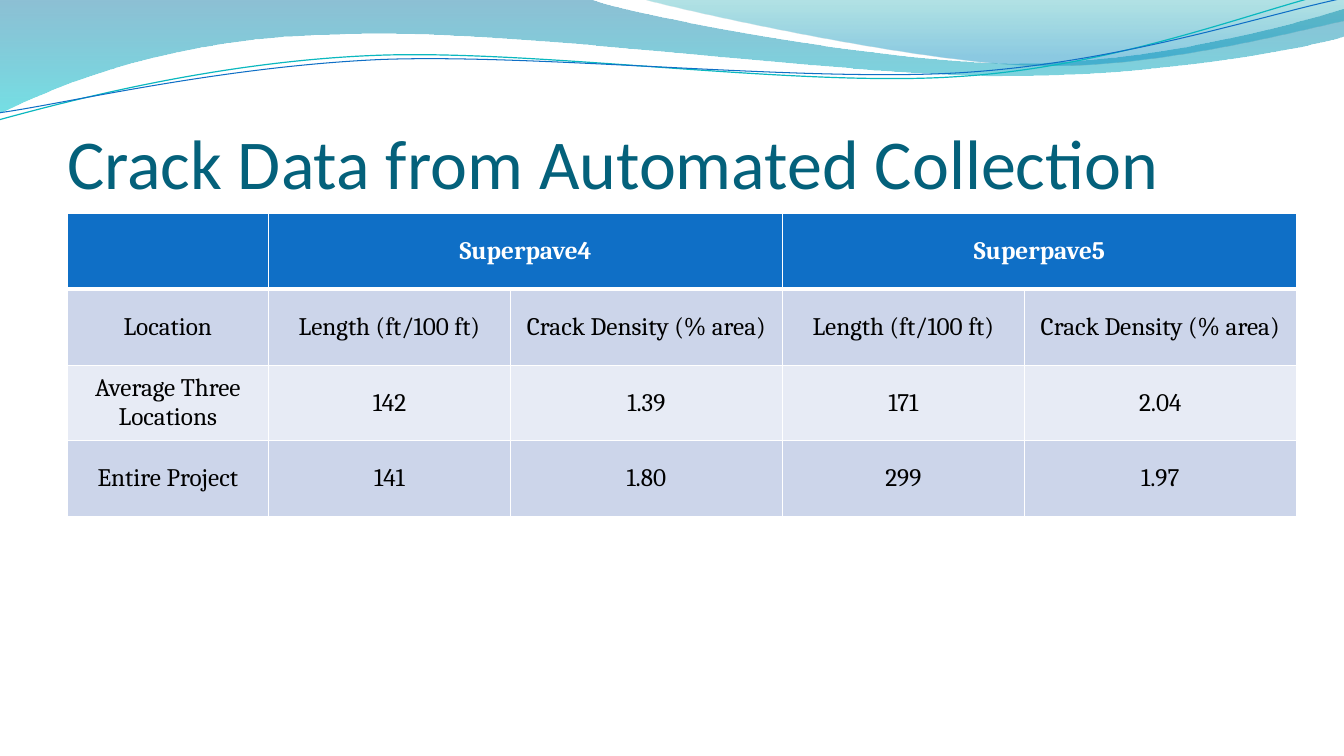
import math

import lxml.etree
import pptx
import pptx.dml.color
import pptx.enum.text
import pptx.oxml.ns
import pptx.util

Cm = pptx.util.Cm
Pt = pptx.util.Pt
qn = pptx.oxml.ns.qn

COLORS = {
    "title": "04617B",
    "header": "0F6FC6",
    "band_dark": "CCD5EA",
    "band_light": "E7EBF5",
    "white": "FFFFFF",
    "black": "000000",
    "deep_teal": "0074A1",
    "cyan": "00C6CF",
    "sea_green": "00A1A9",
    "sky": "008BBF",
    "line_teal": "0AB8BF",
    "line_blue": "0F6FC6",
}

LEFT_WAVE = [
    [(-0.02, 0)],
    [(14.91, -0.01)],
    [(16.1, 0.43), (22.48, 1.6), (25.68, 1.6)],
    [(28.91, 1.6), (32.46, 0.66), (33.86, 0.23)],
    [(33.91, 0.91)],
    [(33.3, 1.12), (29.46, 1.93), (25.25, 1.91)],
    [(21.06, 1.91), (12.93, 0.71), (8.71, 0.86)],
    [(4.37, 0.91), (1.55, 2.11), (-0.03, 2.87)],
]
RIGHT_WAVE = [
    [(16.23, -0.01)],
    [(17.27, 0.28), (23.09, 1.57), (26.04, 1.65)],
    [(28.98, 1.75), (32.56, 0.81), (33.86, 0.53)],
    [(33.86, 0)],
]
TEAL_CURVE = [
    [(-0.03, 3.02)],
    [(1.63, 2.57), (5.36, 1.57), (9.37, 1.4)],
    [(13.39, 1.22), (20.07, 2.21), (24.13, 1.93)],
    [(28.19, 1.68), (31.8, 0.2), (33.81, -0.25)],
]
BLUE_CURVE = [
    [(0, 2.84)],
    [(1.6, 2.62), (5.54, 1.68), (9.6, 1.5)],
    [(13.64, 1.35), (20.22, 2.08), (24.26, 1.83)],
    [(28.32, 1.57), (31.88, 0.36), (33.88, -0.05)],
]
CURVE_TILT = -2.7

MEASURES = ["Length (ft/100 ft)", "Crack Density (% area)"]
ROWS = [
    ["", "Superpave4", "", "Superpave5", ""],
    ["Location"] + MEASURES * 2,
    ["Average Three Locations", "142", "1.39", "171", "2.04"],
    ["Entire Project", "141", "1.80", "299", "1.97"],
]
COLUMN_WIDTHS = [5.08, 6.09, 6.86, 6.09, 6.86]
ROW_HEIGHT = 1.91


def rgb(name):
    return pptx.dml.color.RGBColor.from_string(COLORS[name])


def turn(segments, center, degrees):
    cx, cy = center
    cos, sin = math.cos(math.radians(degrees)), math.sin(math.radians(degrees))
    return [
        [(cx + (x - cx) * cos - (y - cy) * sin, cy + (x - cx) * sin + (y - cy) * cos)
         for x, y in segment]
        for segment in segments
    ]


class Deck:
    title_font = "Calibri"
    table_font = "Cambria"

    def __init__(self):
        self.prs = pptx.Presentation()
        self.prs.slide_width = Cm(33.87)
        self.prs.slide_height = Cm(19.05)
        self.s = self.prs.slides.add_slide(self.prs.slide_layouts[5])

    def outline(self, segments, close):
        points = [(Cm(x), Cm(y)) for segment in segments for x, y in segment]
        builder = self.s.shapes.build_freeform(*points[0])
        builder.add_line_segments(points[1:], close=close)
        sp = builder.convert_to_shape()
        sp.shadow.inherit = False
        steps = sp._element.spPr.iter(qn("a:lnTo"))
        steps = iter(list(steps))
        for segment in segments[1:]:
            first, *others = [next(steps) for _ in segment]
            if others:
                first.tag = qn("a:cubicBezTo")
            for step in others:
                first.append(step[0])
                step.getparent().remove(step)
        return sp

    def wave(self, segments, stops):
        sp = self.outline(segments, True)
        sp.line.fill.background()
        sp.fill.gradient()
        sp.fill.gradient_angle = 270
        for stop, (position, color, _) in zip(sp.fill.gradient_stops, stops):
            stop.position = position
            stop.color.rgb = rgb(color)
        colors = sp._element.spPr.iter(qn("a:srgbClr"))
        for element, (_, _, opacity) in zip(colors, stops):
            lxml.etree.SubElement(element, qn("a:alpha"), val=str(opacity * 1000))

    def curve(self, segments, center, color, width):
        sp = self.outline(turn(segments, center, -CURVE_TILT), False)
        sp.rotation = CURVE_TILT
        sp.fill.background()
        sp.line.color.rgb = rgb(color)
        sp.line.width = Pt(width)

    def text_style(self, p, font, size, color, bold=False):
        for r in p.runs:
            r.font.name = font
            r.font.size = Pt(size)
            r.font.bold = bold
            r.font.color.rgb = rgb(color)

    def title(self, text):
        sp = self.s.shapes.title
        sp.left, sp.top, sp.width, sp.height = Cm(1.69), Cm(1.96), Cm(30.48), Cm(3.18)
        tf = sp.text_frame
        tf.text = text
        tf.word_wrap = True
        tf.auto_size = pptx.enum.text.MSO_AUTO_SIZE.NONE
        tf.vertical_anchor = pptx.enum.text.MSO_ANCHOR.BOTTOM
        tf.margin_left = tf.margin_right = tf.margin_bottom = 0
        tf.margin_top = Cm(0.13)
        p = tf.paragraphs[0]
        p.alignment = pptx.enum.text.PP_ALIGN.LEFT
        self.text_style(p, self.title_font, 50, "title")

    def borders(self, cell, row):
        widths = {"L": 1, "R": 1, "T": 3 if row == 1 else 1, "B": 3 if row == 0 else 1}
        tcPr = cell._tc.get_or_add_tcPr()
        for side, width in widths.items():
            ln = lxml.etree.SubElement(tcPr, qn("a:ln" + side), w=str(Pt(width)))
            fill = lxml.etree.SubElement(ln, qn("a:solidFill"))
            lxml.etree.SubElement(fill, qn("a:srgbClr"), val=COLORS["white"])

    def table(self, rows, widths):
        frame = self.s.shapes.add_table(
            len(rows), len(widths), Cm(1.69), Cm(5.38),
            Cm(sum(widths)), Cm(ROW_HEIGHT * len(rows)))
        table = frame.table
        for column, width in zip(table.columns, widths):
            column.width = Cm(width)
        for i, texts in enumerate(rows):
            table.rows[i].height = Cm(ROW_HEIGHT)
            fill = "header" if i == 0 else "band_dark" if i % 2 else "band_light"
            for j, text in enumerate(texts):
                cell = table.cell(i, j)
                self.borders(cell, i)
                cell.fill.solid()
                cell.fill.fore_color.rgb = rgb(fill)
                cell.vertical_anchor = pptx.enum.text.MSO_ANCHOR.MIDDLE
                cell.text_frame.text = text
                p = cell.text_frame.paragraphs[0]
                p.alignment = pptx.enum.text.PP_ALIGN.CENTER
                color = "black" if i else "white"
                self.text_style(p, self.table_font, 18, color, bold=i == 0)
        for j in (1, 3):
            table.cell(0, j).merge(table.cell(0, j + 1))


def main():
    deck = Deck()
    deck.wave(LEFT_WAVE, [(0, "deep_teal", 45), (1, "cyan", 55)])
    deck.wave(RIGHT_WAVE, [(0, "sea_green", 30), (0.8, "sky", 45)])
    deck.curve(TEAL_CURVE, (16.89, 1.46), "line_teal", 0.85)
    deck.curve(BLUE_CURVE, (16.94, 1.5), "line_blue", 0.75)
    deck.title("Crack Data from Automated Collection")
    deck.table(ROWS, COLUMN_WIDTHS)
    deck.prs.save("out.pptx")


if __name__ == "__main__":
    main()
